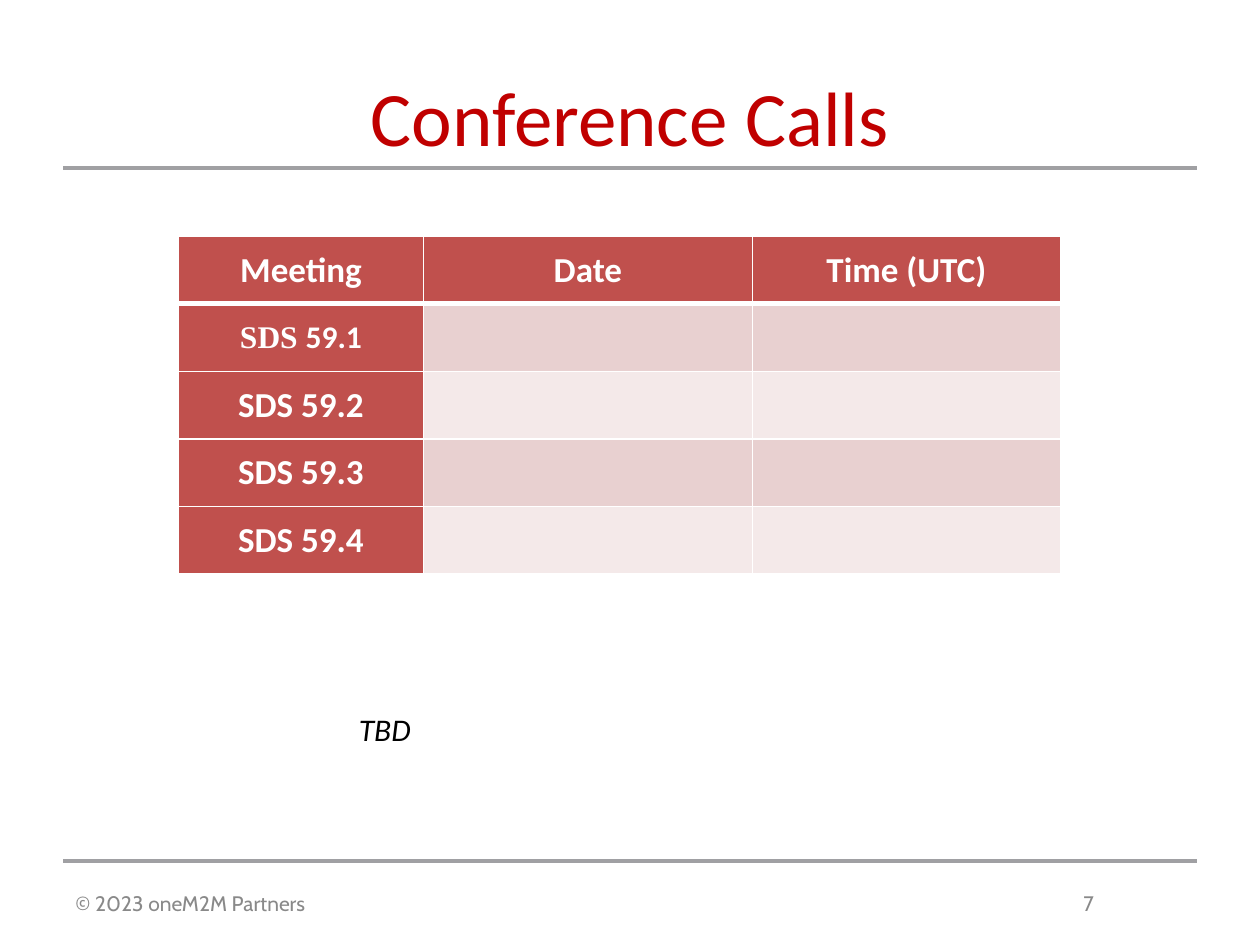
from lxml import etree
from pptx import Presentation
from pptx.dml.color import RGBColor
from pptx.enum.shapes import MSO_CONNECTOR
from pptx.enum.text import MSO_ANCHOR, MSO_AUTO_SIZE, PP_ALIGN
from pptx.oxml.ns import qn
from pptx.util import Pt

STRAIGHT = MSO_CONNECTOR.STRAIGHT
TOP, MIDDLE = MSO_ANCHOR.TOP, MSO_ANCHOR.MIDDLE
CENTER = PP_ALIGN.CENTER
FIXED = MSO_AUTO_SIZE.NONE

COLORS = {
    "title": "C00000", "rule": "A0A0A3", "footer": "898989", "note": "000000",
    "head": "C0504D", "odd": "E8D0D0", "even": "F4E9E9", "white": "FFFFFF",
}
HEADERS = ["Meeting", "Date", "Time (UTC)"]
MEETINGS = [
    [("SDS ", 18, "Times New Roman"), ("59.1", 18, "Calibri")],
    *([(f"SDS 59.{n}", 20, "Calibri")] for n in (2, 3, 4)),
]
COL_WIDTHS = [140, 188, 176]


def color(name):
    """Return the named colour."""
    return RGBColor.from_string(COLORS[name])


def add_run(p, text, size, font, fill, bold=False, italic=False):
    """Add one formatted run to a paragraph."""
    r = p.add_run()
    r.text = text
    r.font.size = Pt(size)
    r.font.name = font
    r.font.bold = bold
    r.font.italic = italic
    r.font.color.rgb = color(fill)


def add_rule(s, x, y, width):
    """Draw a horizontal grey rule."""
    line = s.shapes.add_connector(STRAIGHT, Pt(x), Pt(y), Pt(x + width), Pt(y))
    line.line.color.rgb = color("rule")
    line.line.width = Pt(1.75)
    etree.SubElement(line._element.spPr, qn("a:effectLst"))


def add_title(s, x, y, width, height, text):
    """Place and format the title placeholder."""
    sp = s.shapes.title
    sp.left, sp.top, sp.width, sp.height = Pt(x), Pt(y), Pt(width), Pt(height)
    tf = sp.text_frame
    tf.auto_size = FIXED
    tf.vertical_anchor = TOP
    p = tf.paragraphs[0]
    p.alignment = CENTER
    add_run(p, text, 44, "Calibri", "title")


def add_footer(s, x, y, width, height, text, number):
    """Write the copyright line and the page number at a tab stop."""
    tf = s.shapes.add_textbox(Pt(x), Pt(y), Pt(width), Pt(height)).text_frame
    tf.word_wrap = True
    tf.vertical_anchor = MIDDLE
    p = tf.paragraphs[0]
    tabs = etree.SubElement(p._p.get_or_add_pPr(), qn("a:tabLst"))
    etree.SubElement(tabs, qn("a:tab"), pos=str(Pt(576)), algn="l")
    add_run(p, f"{text}\t{number}", 12, "Cabin", "footer")


def style_cell(cell, fill, top=1, bottom=1):
    """Give a cell white borders, a fill and tight margins."""
    tc_pr = cell._tc.get_or_add_tcPr()
    for side, width in (("L", 1), ("R", 1), ("T", top), ("B", bottom)):
        ln = etree.SubElement(tc_pr, qn(f"a:ln{side}"), w=str(Pt(width)))
        solid = etree.SubElement(ln, qn("a:solidFill"))
        etree.SubElement(solid, qn("a:srgbClr"), val=COLORS["white"])
    cell.fill.solid()
    cell.fill.fore_color.rgb = color(fill)
    cell.vertical_anchor = MIDDLE
    cell.margin_left = cell.margin_right = Pt(5)
    cell.margin_top = cell.margin_bottom = Pt(0)


def add_schedule(s, x, y, width, height):
    """Build the table of meetings, dates and times."""
    rows = [[[(text, 20, "Calibri")] for text in HEADERS]]
    rows += [[runs, [], []] for runs in MEETINGS]
    table = s.shapes.add_table(
        len(rows), len(HEADERS), Pt(x), Pt(y), Pt(width), Pt(height)).table
    table.first_col = True
    for column, col_width in zip(table.columns, COL_WIDTHS):
        column.width = Pt(col_width)
    for i, row in enumerate(rows):
        table.rows[i].height = Pt(height / len(rows))
        band = "odd" if i % 2 else "even"
        for j, runs in enumerate(row):
            cell = table.cell(i, j)
            style_cell(cell, "head" if i == 0 or j == 0 else band,
                       top=3 if i == 1 else 1, bottom=3 if i == 0 else 1)
            p = cell.text_frame.paragraphs[0]
            p.alignment = CENTER
            for text, size, font in runs:
                add_run(p, text, size, font, "white", bold=True)


def add_note(s, x, y, width, height, text):
    """Write the italic remark under the table."""
    tf = s.shapes.add_textbox(Pt(x), Pt(y), Pt(width), Pt(height)).text_frame
    tf.word_wrap = False
    add_run(tf.paragraphs[0], text, 18, "Calibri", "note", italic=True)


def main():
    """Build and save the slide."""
    prs = Presentation()
    prs.slide_width, prs.slide_height = Pt(720), Pt(540)
    s = prs.slides.add_slide(prs.slide_layouts[5])
    for y in (492, 96):
        add_rule(s, 36, y, 648)
    add_title(s, 36, 36, 648, 90, "Conference Calls")
    add_footer(s, 36, 492, 648, 48, "© 2023 oneM2M Partners", 7)
    add_schedule(s, 102, 135, 504, 193)
    add_note(s, 198, 402, 45, 29, "TBD")
    prs.save("out.pptx")


if __name__ == "__main__":
    main()
